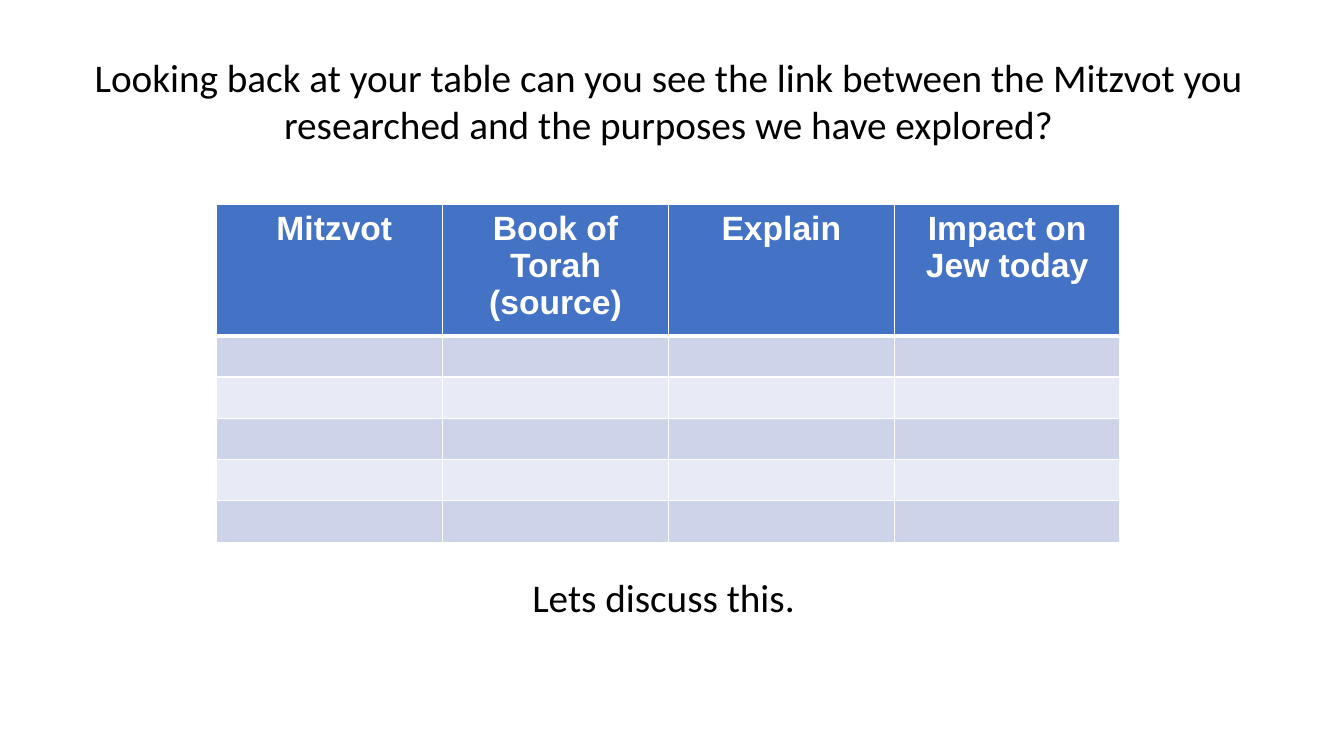
from lxml import etree
from pptx import Presentation
from pptx.dml.color import RGBColor
from pptx.enum.text import MSO_ANCHOR, MSO_AUTO_SIZE, PP_ALIGN
from pptx.oxml.ns import qn
from pptx.util import Inches, Pt

BLACK = RGBColor(0x00, 0x00, 0x00)
WHITE = RGBColor(0xFF, 0xFF, 0xFF)
HEADER_BLUE = RGBColor(0x44, 0x72, 0xC4)
BAND_DARK = RGBColor(0xCD, 0xD4, 0xEA)
BAND_LIGHT = RGBColor(0xE8, 0xEB, 0xF5)

HEADINGS = [" Mitzvot", "Book of Torah (source)", "Explain", "Impact on Jew today"]
EMPTY_ROWS = 5


def write(frame, text, font="Calibri", size=28, color=BLACK, bold=False):
    frame.word_wrap = True
    frame.vertical_anchor = MSO_ANCHOR.TOP
    paragraph = frame.paragraphs[0]
    paragraph.alignment = PP_ALIGN.CENTER
    run = paragraph.add_run()
    run.text = text
    run.font.name = font
    run.font.size = Pt(size)
    run.font.bold = bold
    run.font.color.rgb = color


def set_borders(cell, **widths):
    properties = cell._tc.get_or_add_tcPr()
    for position, (side, width) in enumerate(widths.items()):
        line = etree.Element(qn(f"a:{side}"), w=str(Pt(width)))
        fill = etree.SubElement(line, qn("a:solidFill"))
        etree.SubElement(fill, qn("a:srgbClr"), val=str(WHITE))
        properties.insert(position, line)


prs = Presentation()
prs.slide_width, prs.slide_height = Inches(13.33), Inches(7.5)
slide = prs.slides.add_slide(prs.slide_layouts[5])

# Question
question = slide.shapes.title
question.left, question.top = Inches(0.14), Inches(0.48)
question.width, question.height = Inches(12.98), Inches(1.1)
question.text_frame.auto_size = MSO_AUTO_SIZE.NONE
write(question.text_frame,
      "Looking back at your table can you see the link between the Mitzvot "
      "you researched and the purposes we have explored?")

# Mitzvot table: a header row above banded empty rows
mitzvot = slide.shapes.add_table(
    EMPTY_ROWS + 1, len(HEADINGS),
    Inches(2.15), Inches(2.03), Inches(8.96), Inches(3.34)).table
for column in mitzvot.columns:
    column.width = Inches(2.24)
for index, row in enumerate(mitzvot.rows):
    is_header = index == 0
    row.height = Inches(1.3 if is_header else 0.41)
    band = BAND_DARK if index % 2 else BAND_LIGHT
    for cell, heading in zip(row.cells, HEADINGS):
        cell.fill.solid()
        cell.fill.fore_color.rgb = HEADER_BLUE if is_header else band
        set_borders(cell, lnL=1, lnR=1, lnT=3 if index == 1 else 1,
                    lnB=3 if is_header else 1)
        if is_header:
            write(cell.text_frame, heading, "Arial", 24, WHITE, bold=True)

# Closing prompt
closing = slide.shapes.add_textbox(Inches(0.09), Inches(5.64), Inches(12.98), Inches(0.57))
write(closing.text_frame, "Lets discuss this.")

prs.save("out.pptx")
